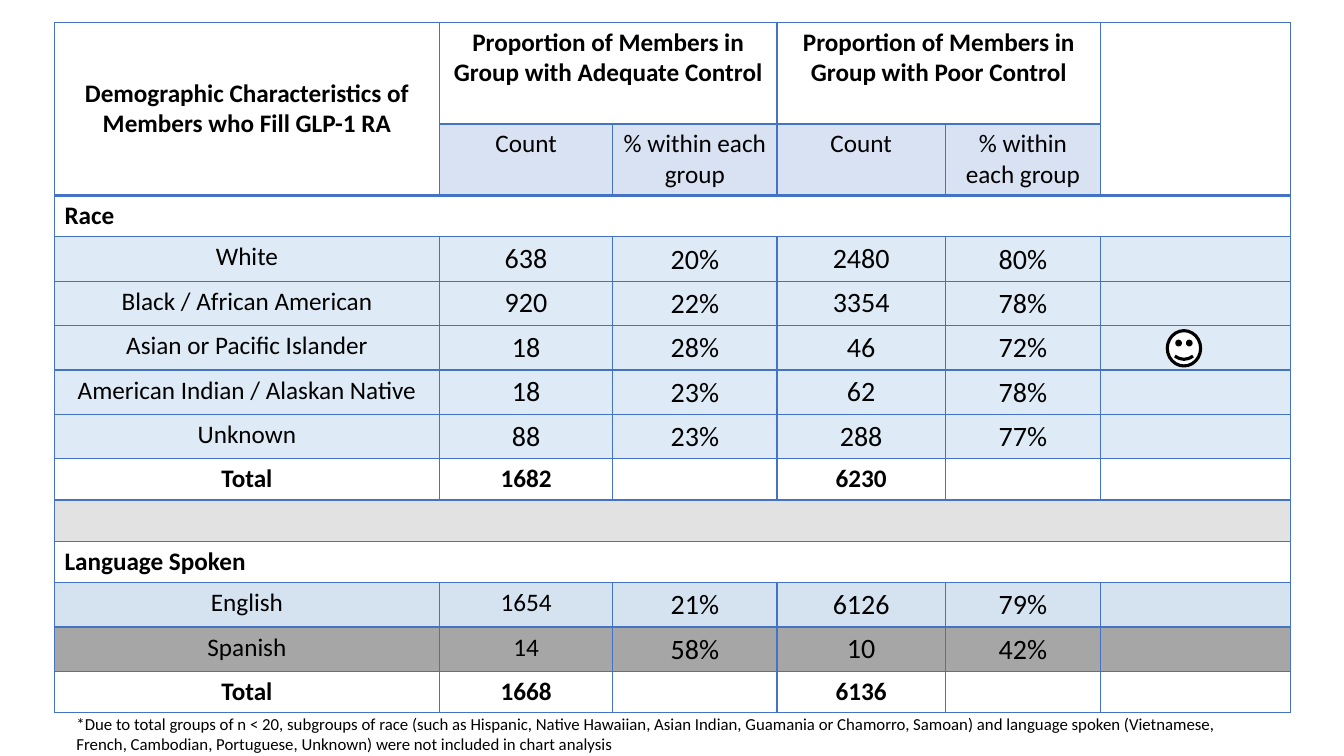
"""Builds a slide with a table of GLP-1 RA members by race and language."""
from lxml import etree
from pptx import Presentation
from pptx.dml.color import RGBColor
from pptx.enum.shapes import MSO_SHAPE
from pptx.enum.text import MSO_ANCHOR, PP_ALIGN
from pptx.oxml.ns import qn
from pptx.util import Pt

LEFT, CENTER = PP_ALIGN.LEFT, PP_ALIGN.CENTER
TOP, MIDDLE = MSO_ANCHOR.TOP, MSO_ANCHOR.MIDDLE
SMILEY = MSO_SHAPE.SMILEY_FACE

BLACK = RGBColor(0x00, 0x00, 0x00)
WHITE = RGBColor(0xFF, 0xFF, 0xFF)
BLUE = RGBColor(0x44, 0x72, 0xC4)
PALE_BLUE = RGBColor(0xDE, 0xEB, 0xF7)
DEEP_BLUE = RGBColor(0x2E, 0x75, 0xB6)
WARM_GREY = RGBColor(0x76, 0x71, 0x71)
GREY = RGBColor(0xA6, 0xA6, 0xA6)

COLUMN_WIDTHS = [275, 123.8, 117.4, 120.2, 110.9, 135.4]
ROW_HEIGHTS = [72.7, 51.1] + [29.5] * 12
RACES = [
    ("White", "638", "20%", "2480", "80%"),
    ("Black / African American", "920", "22%", "3354", "78%"),
    ("Asian or Pacific Islander", "18", "28%", "46", "72%"),
    ("American Indian / Alaskan Native", "18", "23%", "62", "78%"),
    ("Unknown", "88", "23%", "288", "77%"),
]
LANGUAGES = [
    ("English", "1654", "21%", "6126", "79%", DEEP_BLUE, 20),
    ("Spanish", "14", "58%", "10", "42%", GREY, 100),
]


class SlideBuilder:
    """Holds the text style and the current slide."""

    def __init__(self, slide, font_name="Calibri"):
        self.slide = slide
        self.font_name = font_name

    def style(self, paragraph, size, bold=False, align=LEFT):
        """Sets font and alignment of a paragraph."""
        paragraph.alignment = align
        font = paragraph.font
        font.name, font.size, font.bold = self.font_name, Pt(size), bold
        font.color.rgb = BLACK

    def table(self, left, top, widths, heights):
        """Adds a plain table with thin blue borders."""
        table = self.slide.shapes.add_table(
            len(heights), len(widths), Pt(left), Pt(top),
            Pt(sum(widths)), Pt(sum(heights))).table
        table.first_row = table.horz_banding = False
        for column, width in zip(table.columns, widths):
            column.width = Pt(width)
        for row, height in zip(table.rows, heights):
            row.height = Pt(height)
        for cell in table.iter_cells():
            self.borders(cell)
            self.cell(cell)
        return table

    def borders(self, cell, bottom=1):
        """Draws the four borders of a cell."""
        properties = cell._tc.get_or_add_tcPr()
        for index, (side, width) in enumerate(zip("LRTB", (1, 1, 1, bottom))):
            for old in properties.findall(qn("a:ln" + side)):
                properties.remove(old)
            line = etree.Element(qn("a:ln" + side), w=str(Pt(width)))
            fill = etree.SubElement(line, qn("a:solidFill"))
            etree.SubElement(fill, qn("a:srgbClr"), val=str(BLUE))
            properties.insert(index, line)

    def cell(self, cell, text="", size=18, bold=False, align=CENTER,
             anchor=TOP):
        """Writes a table cell and clears its fill."""
        cell.text = text
        cell.vertical_anchor = anchor
        cell.fill.background()
        self.style(cell.text_frame.paragraphs[0], size, bold, align)

    def fill(self, cell, color, opacity=100):
        """Fills a cell, optionally see-through."""
        cell.fill.solid()
        cell.fill.fore_color.rgb = color
        if opacity < 100:
            tint = cell._tc.tcPr.find(qn("a:solidFill"))[0]
            etree.SubElement(tint, qn("a:alpha"), val=str(opacity * 1000))

    def data_row(self, table, row, values, color, opacity=100, count_size=20):
        """Writes a label, counts and percentages on a coloured row."""
        sizes = (18, count_size, 20, 20, 20)
        for column, (text, size) in enumerate(zip(values, sizes)):
            cell = table.cell(row, column)
            percent = text.endswith("%")
            self.cell(cell, text, size, anchor=MIDDLE if percent else TOP)
            if percent:
                cell.margin_left = cell.margin_right = Pt(0.7)
                cell.margin_top, cell.margin_bottom = Pt(0.7), Pt(0)
        for column in range(len(table.columns)):
            self.fill(table.cell(row, column), color, opacity)

    def section_row(self, table, row, text, color=WHITE):
        """Merges a row into one heading band."""
        heading = table.cell(row, 0)
        heading.merge(table.cell(row, len(table.columns) - 1))
        self.cell(heading, text, bold=True, align=LEFT)
        self.fill(heading, color, 20)

    def total_row(self, table, row, adequate, poor):
        """Writes the totals of a section."""
        for column, text in enumerate(("Total", adequate, "", poor, "", "")):
            self.cell(table.cell(row, column), text, bold=True)
            self.fill(table.cell(row, column), WHITE, 20)

    def note(self, left, top, width, height, text):
        """Adds a wrapped footnote."""
        frame = self.slide.shapes.add_textbox(
            Pt(left), Pt(top), Pt(width), Pt(height)).text_frame
        frame.word_wrap = True
        frame.text = text
        self.style(frame.paragraphs[0], 12)

    def smiley(self, left, top, width, height):
        """Adds an outlined smiley face."""
        face = self.slide.shapes.add_shape(
            SMILEY, Pt(left), Pt(top), Pt(width), Pt(height))
        face.shadow.inherit = False
        face.fill.solid()
        face.fill.fore_color.rgb = WHITE
        face.line.color.rgb = BLACK
        face.line.width = Pt(2.25)


def write_header(builder, table):
    """Writes the two header rows."""
    titles = [
        (0, 1, 0, "Demographic Characteristics of Members who Fill GLP-1 RA", MIDDLE),
        (1, 0, 2, "Proportion of Members in Group with Adequate Control", TOP),
        (3, 0, 4, "Proportion of Members in Group with Poor Control", TOP),
        (5, 1, 5, "", TOP),
    ]
    for column, last_row, last_column, text, anchor in titles:
        title = table.cell(0, column)
        title.merge(table.cell(last_row, last_column))
        builder.borders(title, bottom=2)
        builder.cell(title, text, bold=True, anchor=anchor)
    for column in range(1, 5):
        subtitle = table.cell(1, column)
        builder.cell(subtitle, "Count" if column % 2 else "% within each group")
        builder.fill(subtitle, BLUE, 20)


def main():
    """Builds and saves the slide."""
    deck = Presentation()
    deck.slide_width, deck.slide_height = Pt(960), Pt(540)
    builder = SlideBuilder(deck.slides.add_slide(deck.slide_layouts[6]))
    members = builder.table(38.9, 15.8, COLUMN_WIDTHS, ROW_HEIGHTS)
    write_header(builder, members)
    builder.section_row(members, 2, "Race")
    for row, race in enumerate(RACES, 3):
        builder.data_row(members, row, race, PALE_BLUE)
    builder.total_row(members, 8, "1682", "6230")
    builder.section_row(members, 9, "", WARM_GREY)
    builder.section_row(members, 10, "Language Spoken")
    for row, (*language, color, opacity) in enumerate(LANGUAGES, 11):
        builder.data_row(members, row, language, color, opacity, count_size=18)
    builder.total_row(members, 13, "1668", "6136")
    builder.note(
        47.5, 506.2, 850.3, 36,
        "*Due to total groups of n < 20, subgroups of race (such as Hispanic, "
        "Native Hawaiian, Asian Indian, Guamania or Chamorro, Samoan) and "
        "language spoken (Vietnamese, French, Cambodian, Portuguese, Unknown) "
        "were not included in chart analysis")
    builder.smiley(833.8, 236.2, 23.8, 25.2)
    deck.save("out.pptx")


if __name__ == "__main__":
    main()
